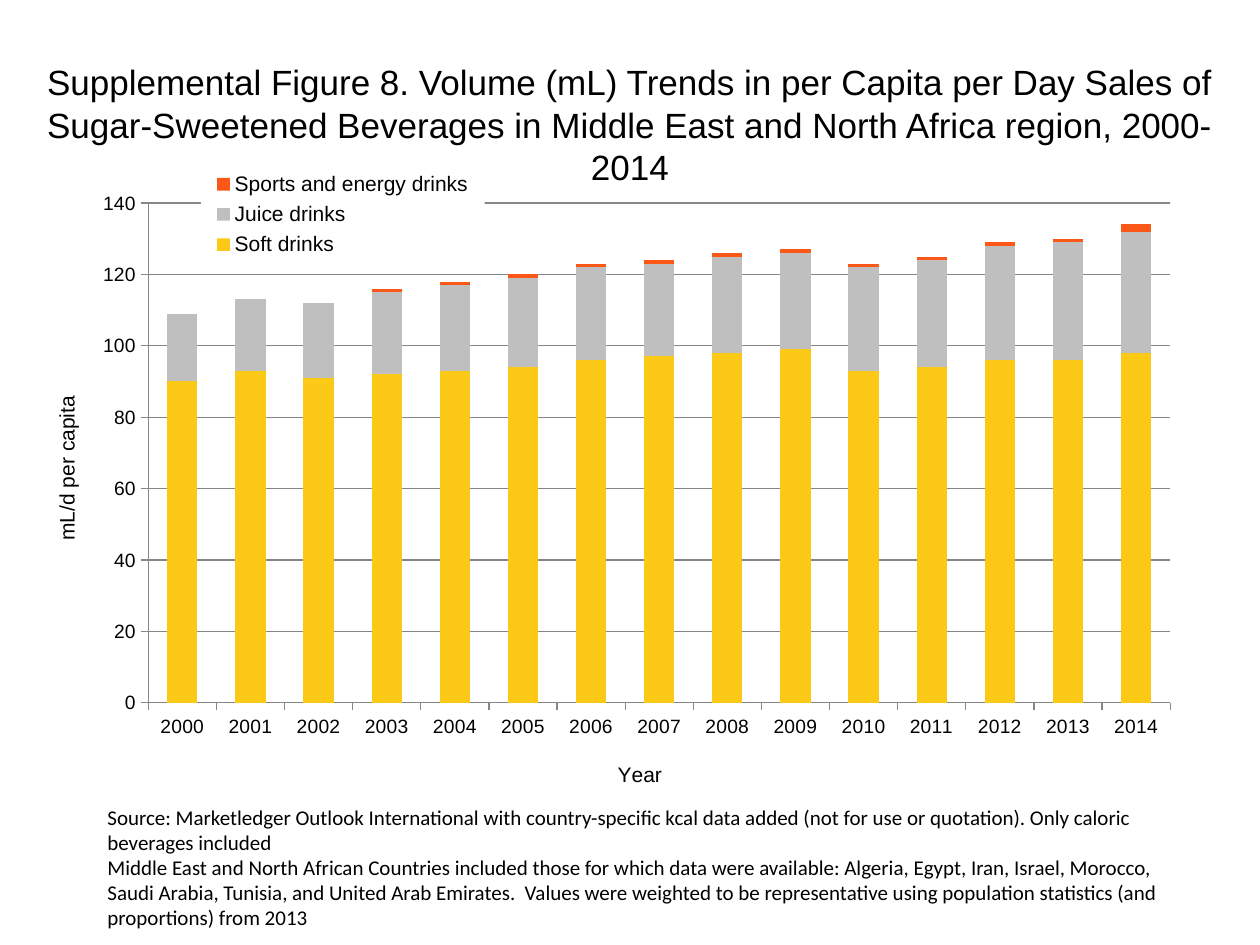
from dataclasses import dataclass

from lxml import etree
from pptx import Presentation
from pptx import util as u
from pptx.chart.data import CategoryChartData
from pptx.dml.color import RGBColor
from pptx.enum import chart as charts
from pptx.enum import text
from pptx.oxml import parse_xml
from pptx.oxml.ns import nsdecls, qn


@dataclass(frozen=True)
class Theme:
    ink: str = "000000"
    rule: str = "868686"
    paper: str = "FFFFFF"
    sans: str = "Arial"
    body: str = "Calibri"
    title: int = 20
    label: int = 12
    tick: int = 11


THEME = Theme()

TITLE = [
    "Supplemental Figure 8. Volume (mL) Trends in per Capita per Day Sales of "
    "Sugar-Sweetened Beverages in Middle East and North Africa region, 2000-2014"
]
NOTES = [
    "Source: Marketledger Outlook International with country-specific kcal data added "
    "(not for use or quotation). Only caloric beverages included",
    "Middle East and North African Countries included those for which data were "
    "available: Algeria, Egypt, Iran, Israel, Morocco, Saudi Arabia, Tunisia, and "
    "United Arab Emirates.  Values were weighted to be representative using "
    "population statistics (and proportions) from 2013",
]
YEARS = [str(year) for year in range(2000, 2015)]
SERIES = [
    ("Soft drinks", "FCC917",
     [90, 93, 91, 92, 93, 94, 96, 97, 98, 99, 93, 94, 96, 96, 98]),
    ("Juice drinks", "BFBFBF",
     [19, 20, 21, 23, 24, 25, 26, 26, 27, 27, 29, 30, 32, 33, 34]),
    ("Sports and energy drinks", "FB5818",
     [0, 0, 0, 1, 1, 1, 1, 1, 1, 1, 1, 1, 1, 1, 2]),
]

TITLE_AREA = (0, 52, 1260, 144)
NOTES_AREA = (95, 798, 1103, 140)
CHART_AREA = (-9, 95, 1279, 756)
PLOT_AREA = (148, 203, 1022, 500)
LEGEND_AREA = (201, 165, 284, 98)
YEAR_POINT = (614, 758)
UNIT_POINT = (50, 392)


def px(length):
    return u.Emu(round(length * 914400 / 126))


def style_font(font, size, name=THEME.sans):
    font.size = u.Pt(size)
    font.name = name
    font.bold = False
    font.color.rgb = RGBColor.from_string(THEME.ink)


def add_text(slide, lines, area, size, name, align, anchor):
    frame = slide.shapes.add_textbox(*map(px, area)).text_frame
    frame.word_wrap = True
    frame.vertical_anchor = anchor
    for index, line in enumerate(lines):
        para = frame.paragraphs[0] if index == 0 else frame.add_paragraph()
        para.alignment = align
        span = para.add_run()
        span.text = line
        style_font(span.font, size, name)


def place(element, index, area, inner=False):
    for old in element.findall(qn("c:layout")):
        element.remove(old)
    left, top, width, height = CHART_AREA
    parts = [("layoutTarget", "inner")] if inner else []
    parts += [("xMode", "edge"), ("yMode", "edge")]
    starts = ((area[0] - left) / width, (area[1] - top) / height)
    sizes = (area[2] / width, area[3] / height) if len(area) == 4 else ()
    parts += zip("xywh", (f"{value:.3f}" for value in (*starts, *sizes)))
    layout = parse_xml(f"<c:layout {nsdecls('c')}/>")
    manual = etree.SubElement(layout, qn("c:manualLayout"))
    for tag, value in parts:
        etree.SubElement(manual, qn(f"c:{tag}")).set("val", value)
    element.insert(index, layout)


def shape_format(fill):
    return parse_xml(
        f"<c:spPr {nsdecls('c', 'a')}>{fill}<a:ln><a:noFill/></a:ln></c:spPr>"
    )


def style_line(line):
    line.color.rgb = RGBColor.from_string(THEME.rule)
    line.width = u.Pt(0.75)


def style_axis(axis, title, point):
    axis.major_tick_mark = charts.XL_TICK_MARK.OUTSIDE
    axis.minor_tick_mark = charts.XL_TICK_MARK.NONE
    style_font(axis.tick_labels.font, THEME.tick)
    style_line(axis.format.line)
    frame = axis.axis_title.text_frame
    frame.text = title
    style_font(frame.paragraphs[0].runs[0].font, THEME.label)
    place(frame._txBody.getparent().getparent(), 1, point)


def add_sales_chart(slide):
    data = CategoryChartData(number_format="#,##0")
    data.categories = YEARS
    for name, _, values in SERIES:
        data.add_series(name, values)
    chart = slide.shapes.add_chart(
        charts.XL_CHART_TYPE.COLUMN_STACKED, *map(px, CHART_AREA), data
    ).chart
    chart.has_title = False
    style_font(chart.font, 10, THEME.body)
    space = chart._chartSpace
    space.chart.addnext(shape_format("<a:noFill/>"))
    place(space.chart.plotArea, 0, PLOT_AREA, inner=True)

    plot = chart.plots[0]
    plot.gap_width = 125
    plot.overlap = 100
    plot.vary_by_categories = False
    for series, (_, color, _) in zip(plot.series, SERIES):
        series.format.fill.solid()
        series.format.fill.fore_color.rgb = RGBColor.from_string(color)

    style_axis(chart.category_axis, "Year", YEAR_POINT)
    scale = chart.value_axis
    style_axis(scale, "mL/d per capita", UNIT_POINT)
    scale.minimum_scale, scale.maximum_scale, scale.major_unit = 0, 140, 20
    scale.tick_labels.number_format = "#,##0"
    scale.tick_labels.number_format_is_linked = False
    scale.has_major_gridlines = True
    style_line(scale.major_gridlines.format.line)

    chart.has_legend = True
    legend = chart.legend
    legend.position = charts.XL_LEGEND_POSITION.RIGHT
    legend.include_in_layout = False
    style_font(legend.font, THEME.label)
    element = legend._element
    place(element, 1, LEGEND_AREA)
    paper = f'<a:solidFill><a:srgbClr val="{THEME.paper}"/></a:solidFill>'
    element.find(qn("c:txPr")).addprevious(shape_format(paper))


def main():
    deck = Presentation()
    deck.slide_width, deck.slide_height = px(1260), px(945)
    slide = deck.slides.add_slide(deck.slide_layouts[6])
    add_text(slide, TITLE, TITLE_AREA, size=THEME.title, name=THEME.sans,
             align=text.PP_ALIGN.CENTER, anchor=text.MSO_ANCHOR.MIDDLE)
    add_text(slide, NOTES, NOTES_AREA, size=THEME.label, name=THEME.body,
             align=text.PP_ALIGN.LEFT, anchor=text.MSO_ANCHOR.TOP)
    add_sales_chart(slide)
    deck.save("out.pptx")


if __name__ == "__main__":
    main()
